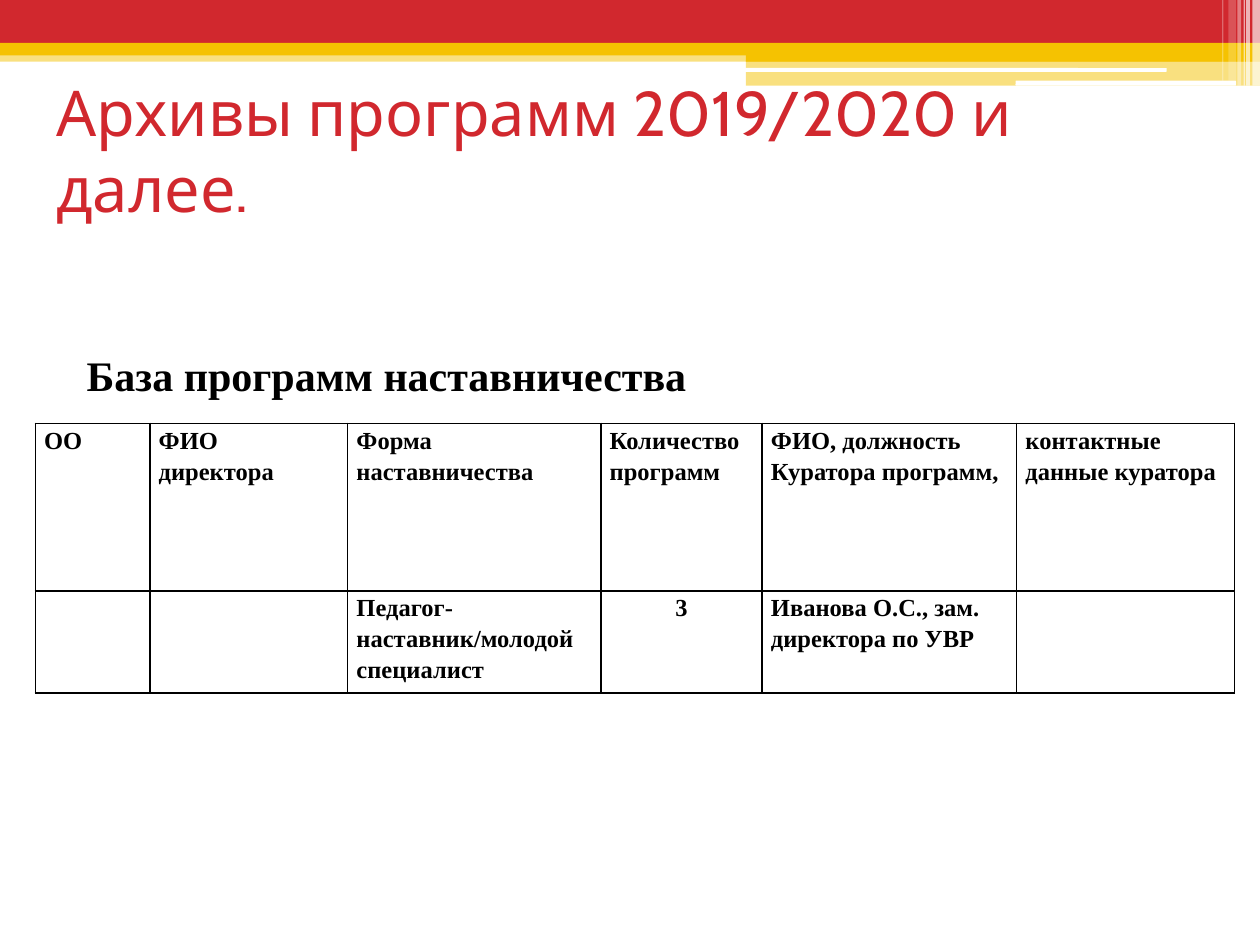
from dataclasses import dataclass

import lxml.etree
import pptx
import pptx.dml.color
import pptx.enum.shapes
import pptx.enum.text
import pptx.oxml.ns
import pptx.util

SHAPES = pptx.enum.shapes.MSO_SHAPE
ALIGN = pptx.enum.text.PP_ALIGN
ANCHOR = pptx.enum.text.MSO_ANCHOR
qn = pptx.oxml.ns.qn


@dataclass(frozen=True)
class Theme:
    red: str = "D1282E"
    gold: str = "F5C201"
    white: str = "FFFFFF"
    black: str = "000000"
    title_font: str = "Cabin"
    body_font: str = "Times New Roman"
    title_size: int = 36
    heading_size: int = 24
    cell_size: int = 14
    border: int = 1


THEME = Theme()
WIDTH, HEIGHT = pptx.util.Inches(10), pptx.util.Inches(7.5)

# Boxes are left, top, width, height in percent of the slide; then colour, opacity.
BANDS = [
    ((0, 5.33, 100, 1.2), THEME.gold, 50),
    ((0, 0, 100, 4.53), THEME.red, 100),
    ((0, 4.53, 100, 1.33), THEME.gold, 100),
    ((59.2, 5.2, 40.8, 1.33), THEME.gold, 100),
    ((59.2, 6.4, 40.8, 2.67), THEME.gold, 50),
]
SLITS = [(59.1, 7.2, 33.5, 0.4), (80.6, 8.53, 17.5, 0.53)]
# Left, width, height, opacity of the white stripes in the corner.
STRIPES = [
    (99.4, 0.6, 9.07, 65),
    (98.9, 0.3, 9.07, 65),
    (98.7, 0.1, 9.07, 60),
    (98.2, 0.3, 9.07, 40),
    (97.5, 0.6, 8.53, 20),
    (97, 0.1, 8.53, 30),
]

COLUMNS = [9.1, 15.7, 20.1, 12.8, 20.2, 17.3]
ROWS = [17.73, 10.8]
CELLS = [
    ["ОО", "ФИО директора", "Форма наставничества", "Количество программ",
     "ФИО, должность Куратора программ,", "контактные данные куратора"],
    ["", "", "Педагог- наставник/молодой специалист", "3",
     "Иванова О.С., зам. директора по УВР", ""],
]


def across(share):
    return round(WIDTH * share / 100)


def down(share):
    return round(HEIGHT * share / 100)


def place(box):
    left, top, width, height = box
    return across(left), down(top), across(width), down(height)


def rgb(colour):
    return pptx.dml.color.RGBColor.from_string(colour)


def add_bar(page, box, colour, opacity=100, kind=SHAPES.RECTANGLE):
    bar = page.shapes.add_shape(kind, *place(box))
    bar.shadow.inherit = False
    bar.line.fill.background()
    bar.fill.solid()
    bar.fill.fore_color.rgb = rgb(colour)
    if opacity < 100:
        tint = bar.fill._xPr.find(".//" + qn("a:srgbClr"))
        lxml.etree.SubElement(tint, qn("a:alpha"), val=str(opacity * 1000))


def style(para, font, size, colour, bold=False):
    for span in para.runs:
        span.font.name = font
        span.font.size = pptx.util.Pt(size)
        span.font.color.rgb = rgb(colour)
        span.font.bold = bold


def add_text(page, box, text, *look):
    frame = page.shapes.add_textbox(*place(box)).text_frame
    frame.word_wrap = True
    frame.vertical_anchor = ANCHOR.MIDDLE
    frame.text = text
    style(frame.paragraphs[0], *look)


def outline(cell):
    properties = cell._tc.get_or_add_tcPr()
    for side in ("a:lnL", "a:lnR", "a:lnT", "a:lnB"):
        line = lxml.etree.SubElement(
            properties, qn(side), w=str(pptx.util.Pt(THEME.border)))
        fill = lxml.etree.SubElement(line, qn("a:solidFill"))
        lxml.etree.SubElement(fill, qn("a:srgbClr"), val=THEME.black)


def fill_cell(cell, text):
    outline(cell)
    cell.fill.background()
    cell.margin_left = cell.margin_right = pptx.util.Inches(0.07)
    cell.margin_top = cell.margin_bottom = 0
    if text:
        cell.text = text
        para = cell.text_frame.paragraphs[0]
        para.line_spacing = 1.15
        para.alignment = ALIGN.CENTER if text.isdigit() else ALIGN.LEFT
        style(para, THEME.body_font, THEME.cell_size, THEME.black, True)


def add_programme_table(page, left, top):
    box = (left, top, sum(COLUMNS), sum(ROWS))
    table = page.shapes.add_table(len(ROWS), len(COLUMNS), *place(box)).table
    table.first_row = table.horz_banding = False
    for column, share in zip(table.columns, COLUMNS):
        column.width = across(share)
    for row, share, texts in zip(table.rows, ROWS, CELLS):
        row.height = down(share)
        for cell, text in zip(row.cells, texts):
            fill_cell(cell, text)


def add_header(page):
    for box, colour, opacity in BANDS:
        add_bar(page, box, colour, opacity)
    for box in SLITS:
        add_bar(page, box, THEME.white, kind=SHAPES.ROUNDED_RECTANGLE)
    for left, width, height, opacity in STRIPES:
        add_bar(page, (left, 0, width, height), THEME.white, opacity)


def main():
    deck = pptx.Presentation()
    deck.slide_width, deck.slide_height = WIDTH, HEIGHT
    page = deck.slides.add_slide(deck.slide_layouts[6])
    add_header(page)
    add_text(page, (3.5, 8, 90, 15.6), "Архивы программ 2019/2020 и далее.",
             THEME.title_font, THEME.title_size, THEME.red)
    add_programme_table(page, 2.8, 44.8)
    add_text(page, (5.9, 36.27, 90.6, 6.67), "База программ наставничества",
             THEME.body_font, THEME.heading_size, THEME.black, True)
    deck.save("out.pptx")


if __name__ == "__main__":
    main()
